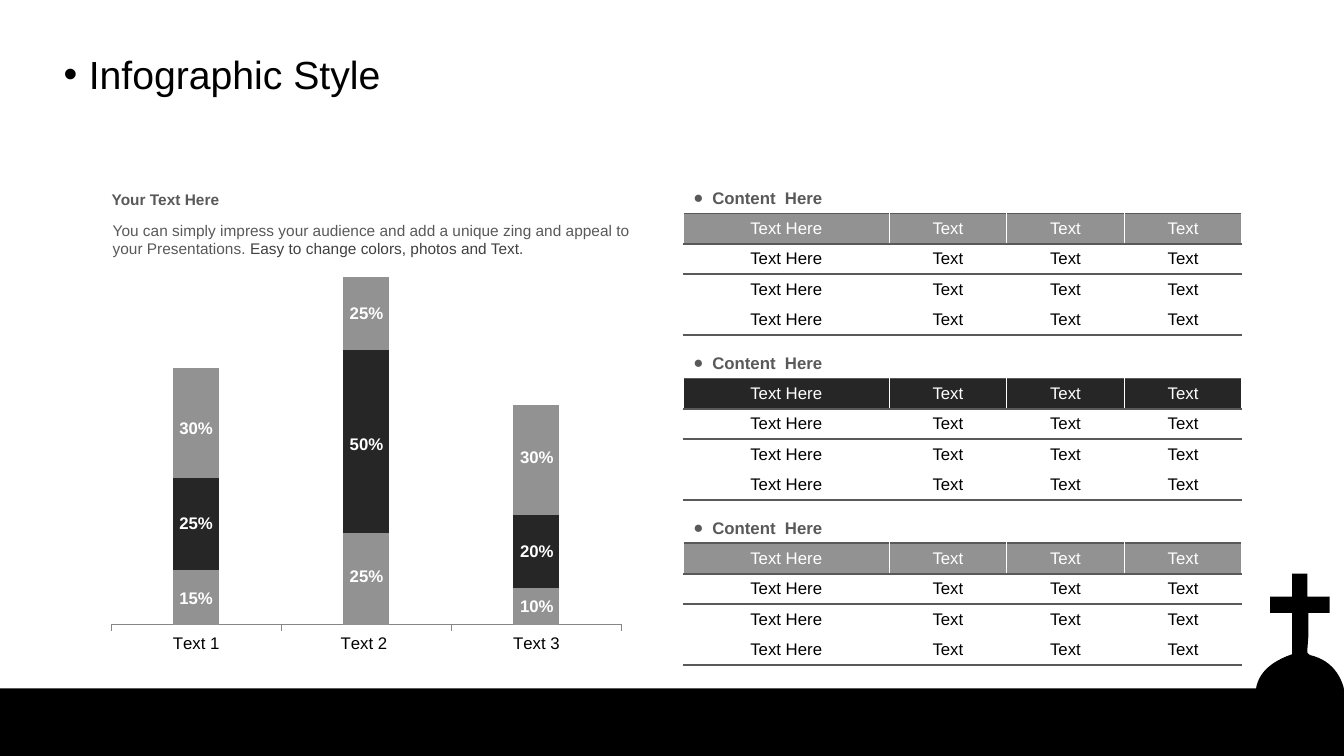
from dataclasses import dataclass

from lxml import etree
from pptx import Presentation
from pptx.chart.data import CategoryChartData
from pptx.dml.color import RGBColor
from pptx.enum.chart import XL_CHART_TYPE, XL_TICK_MARK
from pptx.enum.shapes import MSO_SHAPE
from pptx.enum.text import MSO_ANCHOR, MSO_AUTO_SIZE, PP_ALIGN
from pptx.oxml.ns import qn
from pptx.util import Pt

STACKED = XL_CHART_TYPE.COLUMN_STACKED
TICK_OUT, TICK_NONE = XL_TICK_MARK.OUTSIDE, XL_TICK_MARK.NONE
RECT = MSO_SHAPE.RECTANGLE
TOP, MIDDLE = MSO_ANCHOR.TOP, MSO_ANCHOR.MIDDLE
FIT, FIXED = MSO_AUTO_SIZE.SHAPE_TO_FIT_TEXT, MSO_AUTO_SIZE.NONE
LEFT, CENTER = PP_ALIGN.LEFT, PP_ALIGN.CENTER

BLACK = RGBColor(0x00, 0x00, 0x00)
WHITE = RGBColor(0xFF, 0xFF, 0xFF)
GREY = RGBColor(0x92, 0x92, 0x92)
DARK = RGBColor(0x26, 0x26, 0x26)
SLATE = RGBColor(0x59, 0x59, 0x59)
COAL = RGBColor(0x40, 0x40, 0x40)
AXIS = RGBColor(0x86, 0x86, 0x86)
FONT = "Arial"

COLS = (146.9, 84, 84, 84)
ROWS, ROW_H = 4, 21.7
PANEL_X, PANEL_Y, PANEL_STEP = 488.2, 130.8, 117.8
HEADS = (GREY, DARK, GREY)
RULED = (0, 1, 2, 4)  # row edges that carry a dark line


@dataclass(frozen=True)
class Series:
    name: str
    vals: tuple[int, ...]
    color: RGBColor


@dataclass(frozen=True)
class Label:
    col: int
    top: float
    text: str


SERIES = (
    Series("Series 1", (30, 50, 20), GREY),
    Series("Series 2", (50, 100, 40), DARK),
    Series("Series 3", (60, 40, 60), GREY),
)
LABELS = (
    Label(0, 295.2, "30%"), Label(0, 362.9, "25%"), Label(0, 416.2, "15%"),
    Label(1, 212.4, "25%"), Label(1, 306, "50%"), Label(1, 400.3, "25%"),
    Label(2, 315.4, "30%"), Label(2, 383, "20%"), Label(2, 421.9, "10%"),
)


def style(para, size: float, color: RGBColor, bold: bool = False, align=LEFT) -> None:
    para.alignment = align
    font = para.font
    font.name, font.size, font.bold = FONT, Pt(size), bold
    font.color.rgb = color


def bullet(para, mark: str, indent: float) -> None:
    props = para._p.get_or_add_pPr()
    props.set("marL", str(Pt(indent)))
    props.set("indent", str(-Pt(indent)))
    etree.SubElement(props, qn("a:buFont"), typeface=FONT)
    etree.SubElement(props, qn("a:buChar"), char=mark)


def add_text(slide, x: float, y: float, w: float, h: float, text: str):
    """Add a wrapped text box and return its paragraph."""
    frame = slide.shapes.add_textbox(Pt(x), Pt(y), Pt(w), Pt(h)).text_frame
    frame.word_wrap, frame.auto_size = True, FIT
    frame.text = text
    return frame.paragraphs[0]


def add_title(slide) -> None:
    title = slide.shapes.title
    title.left, title.top, title.width, title.height = Pt(38.2), Pt(36), Pt(911.5), Pt(56.9)
    frame = title.text_frame
    frame.text = "Infographic Style"
    frame.vertical_anchor, frame.auto_size = TOP, FIXED
    para = frame.paragraphs[0]
    para.line_spacing, para.space_before = 0.9, Pt(10)
    bullet(para, "•", 18)
    style(para, 28, BLACK)


def curve(start, ctrl_a, ctrl_b, end, steps: int = 12):
    """Return points along a cubic curve, without its start."""
    pts = []
    for i in range(1, steps + 1):
        t = i / steps
        s = 1 - t
        pts.append(tuple(
            s**3 * a + 3 * s * s * t * b + 3 * s * t * t * c + t**3 * d
            for a, b, c, d in zip(start, ctrl_a, ctrl_b, end)
        ))
    return pts


def paint(shape, color: RGBColor) -> None:
    shape.shadow.inherit = False
    shape.fill.solid()
    shape.fill.fore_color.rgb = color
    shape.line.fill.background()


def add_ground(slide) -> None:
    """Draw the ground strip and the cross on its mound."""
    paint(slide.shapes.add_shape(RECT, 0, Pt(491.8), Pt(960), Pt(48.2)), BLACK)
    start = (897.1, 492.5)
    outline = [
        *curve(start, (898.6, 481.7), (906.5, 473), (923, 467.3)),
        (923, 437.8), (907.2, 437.8), (907.2, 426.2), (923, 426.2),
        (923, 409.7), (933.8, 409.7), (933.8, 426.2), (949.7, 426.2),
        (949.7, 437.8), (934.6, 437.8), (934.6, 454.3), (933.8, 465.1),
        *curve((933.8, 465.1), (933.8, 466.6), (934.6, 467.3), (936, 468)),
        *curve((936, 468), (948.2, 470.9), (956.2, 478.8), (959.8, 491)),
        (959.8, 492.5),
    ]
    pen = slide.shapes.build_freeform(Pt(start[0]), Pt(start[1]))
    pen.add_line_segments([(Pt(x), Pt(y)) for x, y in outline], close=True)
    paint(pen.convert_to_shape(), BLACK)


def edge(cell, side: str, color: RGBColor, width: float) -> None:
    line = etree.SubElement(cell._tc.get_or_add_tcPr(), qn(f"a:ln{side}"), w=str(Pt(width)))
    fill = etree.SubElement(line, qn("a:solidFill"))
    etree.SubElement(fill, qn("a:srgbClr"), val=str(color))


def add_panel(slide, y: float, head: RGBColor) -> None:
    """Add a bulleted heading with its table below."""
    para = add_text(slide, PANEL_X, y, 157.7, 21.6, "Content  Here")
    bullet(para, "●", 13.5)
    style(para, 12, SLATE, bold=True)

    table = slide.shapes.add_table(
        ROWS, len(COLS), Pt(PANEL_X), Pt(y + 21.7), Pt(sum(COLS)), Pt(ROWS * ROW_H)
    ).table
    table.horz_banding = False
    for col, width in zip(table.columns, COLS):
        col.width = Pt(width)
    for r, row in enumerate(table.rows):
        row.height = Pt(ROW_H)
        for c, cell in enumerate(row.cells):
            for side in "LR":
                edge(cell, side, WHITE, 1)
            for side, num in (("T", r), ("B", r + 1)):
                edge(cell, side, *((SLATE, 1.5) if num in RULED else (WHITE, 1)))
            cell.fill.solid()
            cell.fill.fore_color.rgb = WHITE if r else head
            cell.vertical_anchor = MIDDLE
            cell.text = "Text" if c else "Text Here"
            style(cell.text_frame.paragraphs[0], 12, BLACK if r else WHITE, align=CENTER)


def add_bars(slide) -> None:
    data = CategoryChartData()
    data.categories = ("Text 1", "Text 2 ", "Text 3")
    for item in SERIES:
        data.add_series(item.name, item.vals)
    chart = slide.shapes.add_chart(
        STACKED, Pt(64.8), Pt(184.3), Pt(393.8), Pt(290.2), data
    ).chart
    chart.has_legend = chart.has_title = False
    chart.font.name, chart.font.size = FONT, Pt(18)
    chart.font.color.rgb = BLACK
    plot = chart.plots[0]
    plot.gap_width, plot.overlap, plot.vary_by_categories = 270, 100, False
    for bar, item in zip(plot.series, SERIES):
        bar.format.fill.solid()
        bar.format.fill.fore_color.rgb = item.color
    cats, vals = chart.category_axis, chart.value_axis
    cats.major_tick_mark, cats.minor_tick_mark = TICK_OUT, TICK_NONE
    cats.format.line.color.rgb = AXIS
    cats.tick_labels.font.name, cats.tick_labels.font.size = FONT, Pt(12)
    vals.minimum_scale, vals.maximum_scale = 0, 200
    vals.has_major_gridlines = vals.visible = False

    area = chart._chartSpace.find(".//" + qn("c:plotArea"))
    for old in area.findall(qn("c:layout")):
        area.remove(old)
    layout = etree.Element(qn("c:layout"))
    area.insert(0, layout)
    manual = etree.SubElement(layout, qn("c:manualLayout"))
    for tag, val in (("layoutTarget", "inner"), ("xMode", "edge"), ("yMode", "edge"),
                     ("x", "0.037"), ("y", "0.001"), ("w", "0.926"), ("h", "0.902")):
        etree.SubElement(manual, qn(f"c:{tag}"), val=val)

    for tag in LABELS:
        para = add_text(slide, 117.4 + 121.7 * tag.col, tag.top, 45.4, 21.6, tag.text)
        style(para, 12, WHITE, bold=True, align=CENTER)


def main() -> None:
    deck = Presentation()
    deck.slide_width, deck.slide_height = Pt(960), Pt(540)
    slide = deck.slides.add_slide(deck.slide_layouts.get_by_name("Title Only"))
    add_ground(slide)
    add_title(slide)
    for i, head in enumerate(HEADS):
        add_panel(slide, PANEL_Y + i * PANEL_STEP, head)
    add_bars(slide)
    intro = add_text(
        slide, 73.4, 154.1, 402.5, 33.8,
        "You can simply impress your audience and add a unique zing "
        "and appeal to your Presentations. ",
    )
    style(intro, 11, SLATE)
    end = intro.add_run()
    end.text = "Easy to change colors, photos and Text."
    end.font.color.rgb = COAL
    style(add_text(slide, 72.7, 132.5, 403.2, 20.9, "Your Text Here"), 11, SLATE, bold=True)
    deck.save("out.pptx")


if __name__ == "__main__":
    main()
